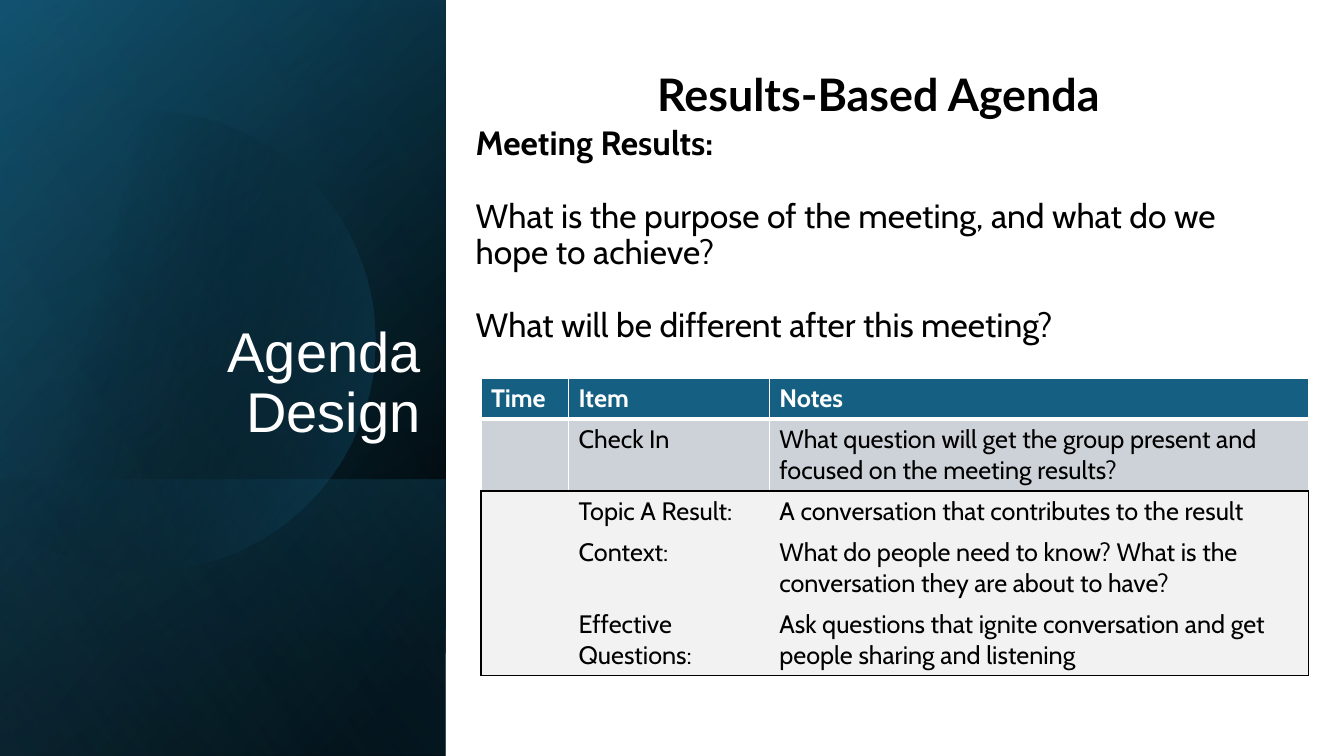
from dataclasses import dataclass
from math import acos, cos, sin

from lxml.etree import SubElement
from pptx import Presentation
from pptx.dml.color import RGBColor
from pptx.enum.shapes import MSO_SHAPE
from pptx.enum.text import MSO_ANCHOR as Anchor, PP_ALIGN as Align
from pptx.oxml.ns import qn
from pptx.util import Inches, Pt

COLORS = {
    "black": "000000",
    "white": "FFFFFF",
    "navy": "0F4861",
    "teal": "156082",
    "sky": "43AFE2",
    "check_in": "CCD2D8",
    "topic": "F2F2F2",
}
PANEL_WIDTH, SLIDE_HEIGHT = 4.42, 7.5


@dataclass
class Stop:
    position: int
    color: str
    opacity: int = 100


@dataclass
class Panel:
    top: float
    angle: int
    stops: list[Stop]


@dataclass
class Line:
    text: str
    bold: bool = False
    space_before: float = 0


@dataclass
class TextBlock:
    box: tuple[float, float, float, float]
    lines: list[Line]
    font: str
    size: int
    color: str = "black"
    align: Align = Align.LEFT
    anchor: Anchor = Anchor.MIDDLE


@dataclass
class AgendaRow:
    cells: tuple[str, str, str]
    fill: str
    color: str = "black"
    bold: bool = False


PANELS = [
    Panel(0, 50, [Stop(0, "black"), Stop(8, "black"), Stop(100, "navy")]),
    Panel(0, 30, [Stop(0, "black", 0), Stop(99, "teal", 46), Stop(100, "teal", 46)]),
    Panel(4.76, 130, [Stop(0, "teal", 29), Stop(2, "teal", 29), Stop(100, "black", 30)]),
]
GLOW_STOPS = [Stop(0, "black", 0), Stop(29, "black", 0), Stop(100, "teal", 43)]
SHEEN = Panel(0, 120, [Stop(0, "black", 0), Stop(99, "sky", 11), Stop(100, "sky", 11)])

TEXTS = [
    TextBlock((0.51, 3.01, 3.76, 1.45), [Line("Agenda Design")],
              "Arial", 40, "white", Align.RIGHT, Anchor.BOTTOM),
    TextBlock((4.61, 0.56, 8.21, 0.81), [Line("Results-Based Agenda", True)],
              "Lato", 32, align=Align.CENTER),
    TextBlock((4.62, 1.67, 8.21, 1.34), [
        Line("Meeting Results:", True),
        Line("What is the purpose of the meeting, and what do we hope to achieve?",
             space_before=26.2),
        Line("What will be different after this meeting?", space_before=26.2),
    ], "Cabin", 24),
]

COLUMN_WIDTHS = (0.87, 1.99, 5.35)
ROW_HEIGHT = 0.41
AGENDA = [
    AgendaRow(("Time", "Item", "Notes"), "teal", "white", True),
    AgendaRow(("", "Check In", "What question will get the group present and "
               "focused on the meeting results?"), "check_in"),
    AgendaRow(("", "Topic A Result:", "A conversation that contributes to the result"),
              "topic"),
    AgendaRow(("", "Context:", "What do people need to know? What is the "
               "conversation they are about to have?"), "topic"),
    AgendaRow(("", "Effective Questions:", "Ask questions that ignite conversation "
               "and get people sharing and listening"), "topic"),
]
FIRST_TOPIC = 2


def rgb(color: str) -> RGBColor:
    return RGBColor.from_string(COLORS[color])


def fill_gradient(shape, stops: list[Stop], angle: float) -> None:
    shape.shadow.inherit = False
    shape.line.fill.background()
    shape.fill.gradient()
    gradient = shape._element.spPr.find(qn("a:gradFill"))
    for child in list(gradient):
        gradient.remove(child)
    gradient.set("rotWithShape", "1")
    stop_list = SubElement(gradient, qn("a:gsLst"))
    for stop in stops:
        mark = SubElement(stop_list, qn("a:gs"), pos=str(stop.position * 1000))
        color = SubElement(mark, qn("a:srgbClr"), val=COLORS[stop.color])
        SubElement(color, qn("a:alpha"), val=str(stop.opacity * 1000))
    SubElement(gradient, qn("a:lin"), ang=str(int(angle * 60000)), scaled="0")


def add_panel(slide, panel: Panel) -> None:
    """Fill the left band from panel.top down with a mirrored, quarter-turned rectangle."""
    length = SLIDE_HEIGHT - panel.top
    left = (PANEL_WIDTH - length) / 2
    top = panel.top + (length - PANEL_WIDTH) / 2
    band = slide.shapes.add_shape(MSO_SHAPE.RECTANGLE, Inches(left), Inches(top),
                                  Inches(length), Inches(PANEL_WIDTH))
    band.rotation = 90
    band._element.spPr.xfrm.set("flipH", "1")
    fill_gradient(band, panel.stops, panel.angle)


def add_glow(slide, center_x: float, center_y: float, radius: float) -> None:
    """Draw a disc cut off at the left edge of the slide."""
    reach, steps = acos(-center_x / radius), 120
    angles = [reach * (2 * i / steps - 1) for i in range(steps + 1)]
    points = [(Inches(center_x + radius * cos(a)), Inches(center_y + radius * sin(a)))
              for a in angles]
    outline = slide.shapes.build_freeform(*points[0])
    outline.add_line_segments(points[1:], close=True)
    fill_gradient(outline.convert_to_shape(), GLOW_STOPS, 14)


def style_font(paragraph, name: str, size: int, color: str, bold: bool) -> None:
    for run in paragraph.runs:
        run.font.name, run.font.size, run.font.bold = name, Pt(size), bold
        run.font.color.rgb = rgb(color)


def add_text(slide, block: TextBlock) -> None:
    frame = slide.shapes.add_textbox(*map(Inches, block.box)).text_frame
    frame.word_wrap = True
    frame.vertical_anchor = block.anchor
    frame.text = "\n".join(line.text for line in block.lines)
    for paragraph, line in zip(frame.paragraphs, block.lines):
        paragraph.alignment = block.align
        paragraph.line_spacing = 0.9
        paragraph.space_before = Pt(line.space_before)
        style_font(paragraph, block.font, block.size, block.color, line.bold)


def cell_borders(row: int, column: int) -> dict[str, tuple[str, int] | None]:
    """Rule cells in white, and frame the topic rows as one black box."""
    white, black = ("white", 1), ("black", 1)
    if row < FIRST_TOPIC:
        bottom = ("white", 3) if row == 0 else black
        top = white if row == 0 else ("white", 3)
        return {"L": white, "R": white, "T": top, "B": bottom}
    return {
        "L": black if column == 0 else None,
        "R": black if column == len(COLUMN_WIDTHS) - 1 else None,
        "T": black if row == FIRST_TOPIC else None,
        "B": black if row == len(AGENDA) - 1 else None,
    }


def set_borders(cell, borders: dict[str, tuple[str, int] | None]) -> None:
    properties = cell._tc.get_or_add_tcPr()
    for side, border in borders.items():
        line = SubElement(properties, qn(f"a:ln{side}"))
        if border is None:
            SubElement(line, qn("a:noFill"))
            continue
        color, width = border
        line.set("w", str(Pt(width)))
        SubElement(SubElement(line, qn("a:solidFill")), qn("a:srgbClr"), val=COLORS[color])


def add_agenda(slide) -> None:
    agenda = slide.shapes.add_table(
        len(AGENDA), len(COLUMN_WIDTHS), Inches(4.77), Inches(3.75),
        Inches(sum(COLUMN_WIDTHS)), Inches(ROW_HEIGHT * len(AGENDA))).table
    for column, width in zip(agenda.columns, COLUMN_WIDTHS):
        column.width = Inches(width)
    for r, row in enumerate(AGENDA):
        agenda.rows[r].height = Inches(ROW_HEIGHT)
        for c, text in enumerate(row.cells):
            cell = agenda.cell(r, c)
            set_borders(cell, cell_borders(r, c))
            cell.fill.solid()
            cell.fill.fore_color.rgb = rgb(row.fill)
            cell.text_frame.text = text
            style_font(cell.text_frame.paragraphs[0], "Cabin", 18, row.color, row.bold)


def main() -> None:
    deck = Presentation()
    deck.slide_width, deck.slide_height = Inches(13.33), Inches(SLIDE_HEIGHT)
    slide = deck.slides.add_slide(deck.slide_layouts[6])
    for panel in PANELS:
        add_panel(slide, panel)
    add_glow(slide, 1.44, 3.38, 2.28)
    add_panel(slide, SHEEN)
    add_agenda(slide)
    for block in TEXTS:
        add_text(slide, block)
    deck.save("out.pptx")


if __name__ == "__main__":
    main()
